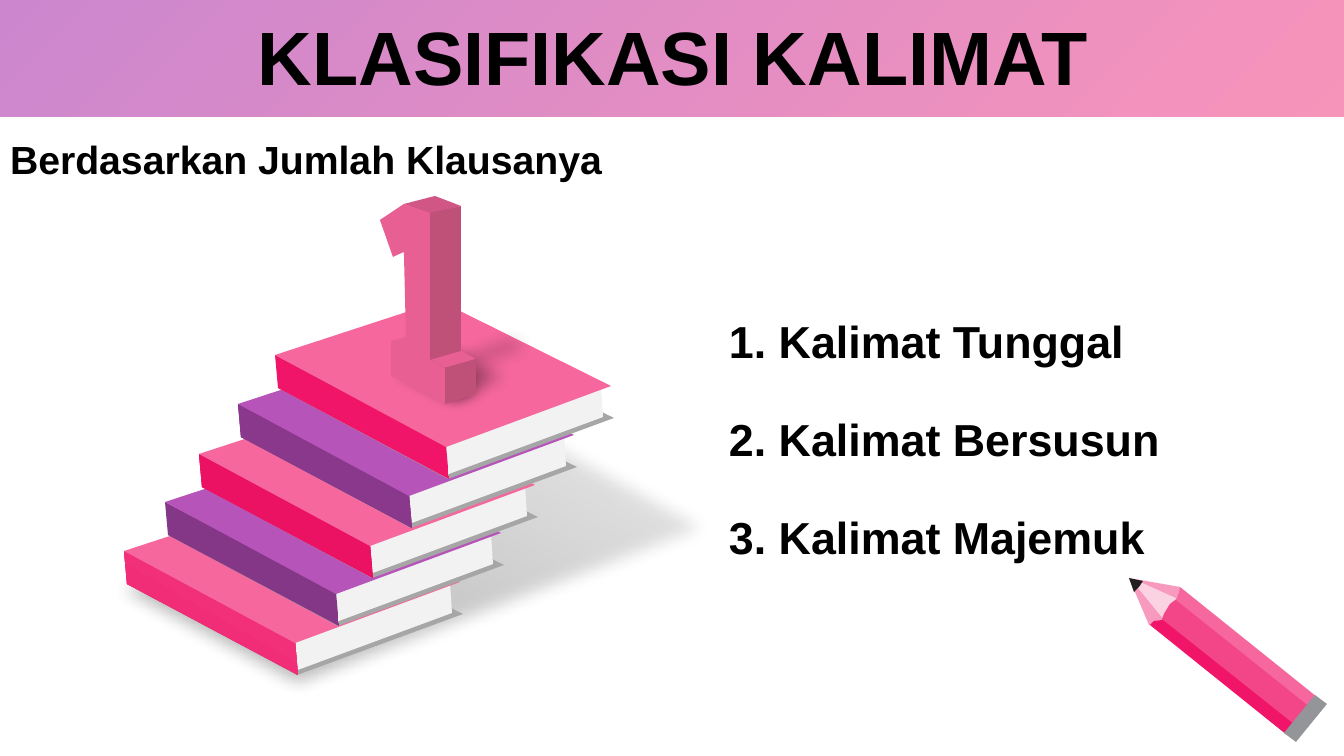
from lxml.etree import SubElement
from pptx import Presentation
from pptx.dml.color import RGBColor
from pptx.enum.shapes import MSO_SHAPE
from pptx.enum.text import MSO_ANCHOR, PP_ALIGN
from pptx.oxml.ns import qn
from pptx.util import Emu, Pt

PX = 914400 / 100.8  # EMU in one px

BLACK = RGBColor(0x00, 0x00, 0x00)
WHITE = RGBColor(0xFF, 0xFF, 0xFF)
PAGES = RGBColor(0xF2, 0xF2, 0xF2)
BACK_COVER = RGBColor(0xA6, 0xA6, 0xA6)
PINK = RGBColor(0xF5, 0x67, 0x9D)
PURPLE = RGBColor(0xB7, 0x54, 0xBA)
ROSE = RGBColor(0xF0, 0x15, 0x68)
ROSE_DARK = RGBColor(0xE5, 0x0F, 0x60)
ROSE_LIGHT = RGBColor(0xF1, 0x26, 0x73)
ROSE_PALE = RGBColor(0xF2, 0x36, 0x7D)
PLUM = RGBColor(0x84, 0x36, 0x87)
PLUM_LIGHT = RGBColor(0x8E, 0x3A, 0x90)
DIGIT_FRONT = RGBColor(0xE8, 0x5F, 0x94)
DIGIT_TOP = RGBColor(0xD0, 0x56, 0x85)
DIGIT_SIDE = RGBColor(0xBF, 0x50, 0x78)
PENCIL_MIDDLE = RGBColor(0xF3, 0x46, 0x88)
LEAD = RGBColor(0x23, 0x1F, 0x20)
FERRULE = RGBColor(0x93, 0x95, 0x98)

# Content
TITLE = "KLASIFIKASI KALIMAT"
SUBTITLE = "Berdasarkan Jumlah Klausanya"
ITEMS = ["1. Kalimat Tunggal", "2. Kalimat Bersusun", "3. Kalimat Majemuk"]

# Outlines of the lowest book; the others are the same book moved
BOOK_BACK = [(127, 584), (290, 529), (463, 614), (297, 675)]
BOOK_PAGES = [(450, 582), (452, 613), (295, 671), (293, 640)]
BOOK_SPINE = [(124, 551), (127, 584), (298, 675), (295, 641)]
BOOK_COVER = [(124, 551), (289, 497), (460, 582), (295, 643)]
BOOKS = [  # offset, cover colour, spine colours at both ends
    ((0, 0), PINK, (ROSE_LIGHT, ROSE_PALE)),
    ((41, -49), PURPLE, (PLUM, PLUM)),
    ((75, -97), PINK, (ROSE, ROSE_DARK)),
    ((114, -147), PURPLE, (PLUM, PLUM_LIGHT)),
    ((151, -196), PINK, (ROSE, ROSE)),
]
BOOKS_SHADOW = [(88, 595), (295, 706), (752, 531), (542, 414), (92, 580)]
DIGIT_SHADOWS = [  # outline, opacity, soft edge in points
    ([(352, 368), (424, 339), (529, 388), (454, 423)], 100, 12),
    ([(362, 354), (439, 324), (553, 376), (472, 414)], 35, 12),
    ([(385, 367), (400, 360), (515, 318), (581, 349), (447, 396)], 27, 12),
]
DIGIT = [
    ([(435, 196), (461, 206), (430, 214), (404, 204)], DIGIT_TOP),
    ([(430, 213), (461, 206), (461, 352), (430, 361)], DIGIT_SIDE),
    ([(430, 360), (461, 351), (476, 359), (445, 368)], DIGIT_FRONT),
    ([(445, 368), (476, 359), (476, 394), (445, 404)], DIGIT_SIDE),
    ([(380, 220), (404, 204), (430, 213), (430, 360), (445, 368), (445, 404),
      (391, 376), (391, 341), (406, 337), (404, 252), (393, 257)], DIGIT_FRONT),
]
PENCIL = [  # outline, colour, opacity
    ([(1149, 625), (1129, 578), (1180, 587), (1183, 607), (1172, 621)], PINK, 66),
    ([(1165, 621), (1129, 577), (1180, 600), (1176, 611)], WHITE, 56),
    ([(1293, 728), (1161, 622), (1164, 614), (1170, 604), (1178, 598),
      (1311, 705)], PENCIL_MIDDLE, 100),
    ([(1287, 735), (1150, 625), (1154, 621), (1163, 620), (1295, 725)], ROSE, 100),
    ([(1310, 707), (1176, 600), (1179, 593), (1180, 587), (1317, 697)], PINK, 100),
    ([(1134, 592), (1129, 578), (1143, 581), (1139, 587)], LEAD, 100),
    ([(1327, 704), (1296, 742), (1284, 733), (1315, 695)], FERRULE, 100),
]

presentation = Presentation()
presentation.slide_width = Emu(round(1344 * PX))
presentation.slide_height = Emu(round(756 * PX))
slide = presentation.slides.add_slide(presentation.slide_layouts[5])


def place(shape, *box):
    shape.left, shape.top, shape.width, shape.height = (
        Emu(round(length * PX)) for length in box)


def paint(shape, *stops, angle=0, soft=0):
    """Fill with one (colour, opacity) stop or a gradient between two."""
    shape.shadow.inherit = False
    shape.line.fill.background()
    if len(stops) == 1:
        shape.fill.solid()
        shape.fill.fore_color.rgb = stops[0][0]
    else:
        shape.fill.gradient()
        shape.fill.gradient_angle = (360 - angle) % 360
        for gradient_stop, (color, _) in zip(shape.fill.gradient_stops, stops):
            gradient_stop.color.rgb = color
    properties = shape._element.spPr
    for color_element, (_, opacity) in zip(properties.iter(qn("a:srgbClr")), stops):
        if opacity < 100:
            SubElement(color_element, qn("a:alpha"), val=str(opacity * 1000))
    if soft:
        effects = properties.find(qn("a:effectLst"))
        SubElement(effects, qn("a:softEdge"), rad=str(Pt(soft)))


def add_outline(points, *stops, offset=(0, 0), **fill_format):
    moved = [(x + offset[0], y + offset[1]) for x, y in points]
    builder = slide.shapes.build_freeform(*moved[0], scale=PX)
    builder.add_line_segments(moved[1:], close=True)
    paint(builder.convert_to_shape(), *stops, **fill_format)


def write(shape, text, size, align=PP_ALIGN.LEFT, anchor=MSO_ANCHOR.TOP,
          line_spacing=1.0, space_before=0):
    frame = shape.text_frame
    frame.word_wrap = True
    frame.vertical_anchor = anchor
    paragraph = frame.paragraphs[0]
    paragraph.alignment = align
    paragraph.line_spacing = line_spacing
    paragraph.space_before = Pt(space_before)
    run = paragraph.add_run()
    run.text = text
    run.font.name = "Arial"
    run.font.size = Pt(size)
    run.font.bold = True
    run.font.color.rgb = BLACK


def add_text(text, size, *box):
    text_box = slide.shapes.add_textbox(0, 0, 0, 0)
    place(text_box, *box)
    text_box.text_frame.margin_left = text_box.text_frame.margin_right = Emu(round(12 * PX))
    write(text_box, text, size)


# Header band, kept behind the title
band = slide.shapes.add_shape(MSO_SHAPE.RECTANGLE, 0, 0, 0, 0)
place(band, 0, 0, 1344, 117)
paint(band, (PINK, 70), (PURPLE, 70), angle=225)
title = slide.shapes.title
band._element.addnext(title._element)
place(title, 35, 21, 1276, 80)
write(title, TITLE, 54, align=PP_ALIGN.CENTER, anchor=MSO_ANCHOR.MIDDLE,
      line_spacing=0.9, space_before=10)

# Stack of books
add_outline(BOOKS_SHADOW, (BLACK, 7), (BLACK, 33), angle=120, soft=12)
for offset, cover, spine in BOOKS:
    add_outline(BOOK_BACK, (BACK_COVER, 100), offset=offset)
    add_outline(BOOK_PAGES, (PAGES, 100), offset=offset)
    add_outline(BOOK_SPINE, *((color, 100) for color in spine),
                offset=offset, angle=300)
    add_outline(BOOK_COVER, (cover, 100), offset=offset)

# Digit on top of the stack
for points, opacity, soft in DIGIT_SHADOWS:
    add_outline(points, (BLACK, opacity), soft=soft)
for points, color in DIGIT:
    add_outline(points, (color, 100))

# Subtitle and list
add_text(SUBTITLE, 28, -2, 130, 668, 57)
for row, item in enumerate(ITEMS):
    add_text(item, 32, 717, 309 + 98 * row, 510, 64)

# Pencil
for points, color, opacity in PENCIL:
    add_outline(points, (color, opacity))

presentation.save("out.pptx")
